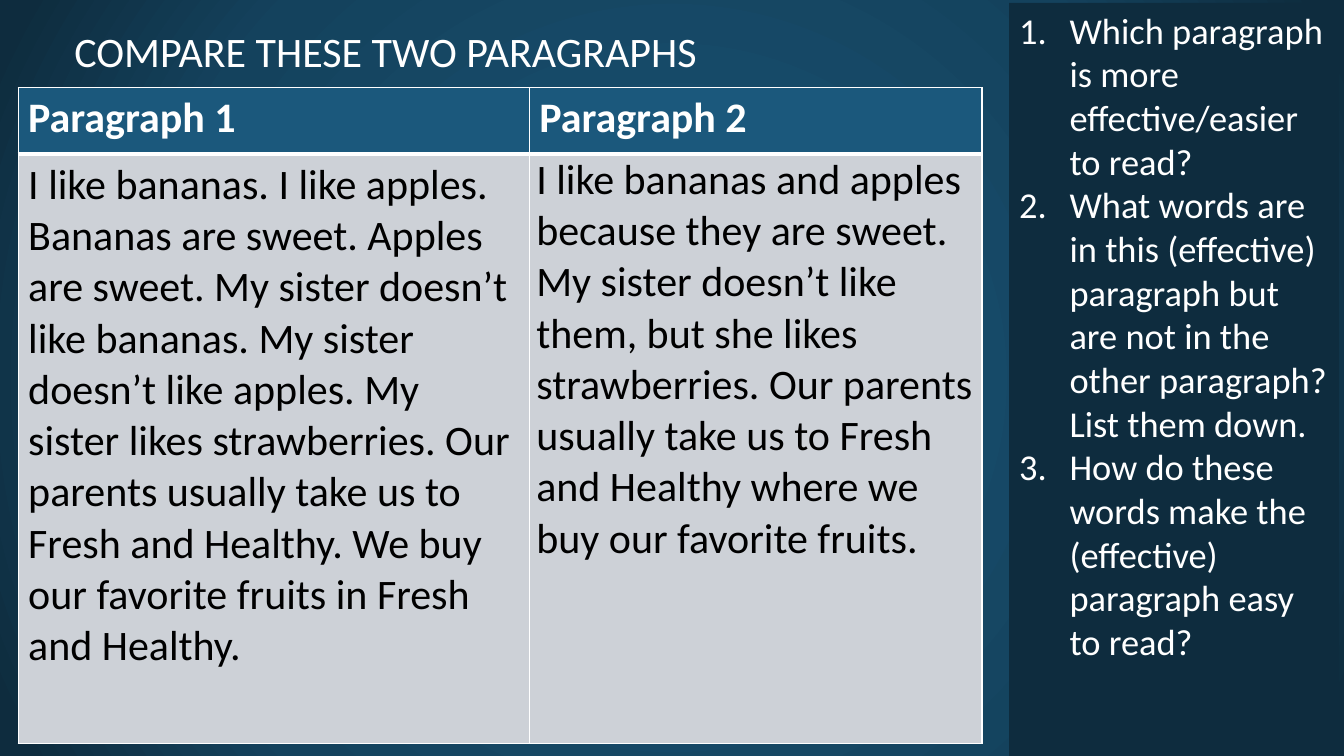
from lxml import etree
from pptx import Presentation
from pptx.dml.color import RGBColor
from pptx.enum import shapes, text
from pptx.oxml import ns
from pptx.util import Inches, Pt

TITLE = "COMPARE THESE TWO PARAGRAPHS"
HEADINGS = ["Paragraph 1", "Paragraph 2"]
PASSAGES = [
    "I like bananas. I like apples. Bananas are sweet. Apples are sweet. "
    "My sister doesn’t like bananas. My sister doesn’t like apples. "
    "My sister likes strawberries. Our parents usually take us to Fresh and Healthy. "
    "We buy our favorite fruits in Fresh and Healthy.",
    "I like bananas and apples because they are sweet. "
    "My sister doesn’t like them, but she likes strawberries. "
    "Our parents usually take us to Fresh and Healthy where we buy our favorite fruits.",
]
QUESTIONS = [
    "Which paragraph is more effective/easier to read?",
    "What words are in this (effective) paragraph but are not in the other paragraph? "
    "List them down.",
    "How do these words make the (effective) paragraph easy to read?",
]
COLOURS = {"white": "FFFFFF", "black": "000000", "header": "1B587C", "body": "CDD1D7",
           "glow": "184E6E", "mid": "14425D", "navy": "0E2C3E"}
GLOW_STOPS = [(0, "glow"), (23, "glow"), (69, "mid"), (97, "navy")]
COLUMNS = [5.07, 4.49]
ROWS = [0.66, 5.85]
TABLE_LEFT, TABLE_TOP = 0.18, 0.87
FONT = "Calibri"


def colour(name):
    return RGBColor.from_string(COLOURS[name])


def add(parent, tag, **attributes):
    return etree.SubElement(parent, ns.qn(tag), {k: str(v) for k, v in attributes.items()})


def add_colour(parent, name):
    add(parent, "a:srgbClr", val=COLOURS[name])


def style(para, size, name, bold=False):
    for span in para.runs:
        span.font.name, span.font.size, span.font.bold = FONT, Pt(size), bold
        span.font.color.rgb = colour(name)


def paint_background(page):
    page.background.fill.gradient()
    gradient = page._element.find(".//" + ns.qn("a:gradFill"))
    for child in list(gradient):
        gradient.remove(child)
    stops = add(gradient, "a:gsLst")
    for share, name in GLOW_STOPS:
        add_colour(add(stops, "a:gs", pos=share * 1000), name)
    circle = add(gradient, "a:path", path="circle")
    add(circle, "a:fillToRect", l=50000, t=50000, r=50000, b=50000)


def add_borders(cell, widths):
    properties = cell._tc.get_or_add_tcPr()
    for side, width in zip("LRTB", widths):
        line = add(properties, "a:ln" + side, w=Pt(width))
        add_colour(add(line, "a:solidFill"), "white")


def add_title(page):
    box = page.shapes.add_textbox(Inches(0.64), Inches(0.13), Inches(7.31), Inches(0.75))
    frame = box.text_frame
    frame.word_wrap = True
    frame.vertical_anchor = text.MSO_ANCHOR.MIDDLE
    frame.text = TITLE
    style(frame.paragraphs[0], 30, "white")


def add_comparison(page):
    table = page.shapes.add_table(
        len(ROWS), len(COLUMNS), Inches(TABLE_LEFT), Inches(TABLE_TOP),
        Inches(sum(COLUMNS)), Inches(sum(ROWS))).table
    for column, width in zip(table.columns, COLUMNS):
        column.width = Inches(width)
    for row, height in zip(table.rows, ROWS):
        row.height = Inches(height)
    looks = [(HEADINGS, "header", "white", True, (1, 1, 1, 3)),
             (PASSAGES, "body", "black", False, (1, 1, 3, 1))]
    for r, (words, fill, ink, bold, widths) in enumerate(looks):
        for c, wording in enumerate(words):
            cell = table.cell(r, c)
            add_borders(cell, widths)
            cell.fill.solid()
            cell.fill.fore_color.rgb = colour(fill)
            cell.text_frame.text = wording
            style(cell.text_frame.paragraphs[0], 30, ink, bold)
    second = table.cell(1, 1)
    second.margin_left = second.margin_right = Inches(0.07)
    second.margin_top = second.margin_bottom = 0


def add_questions(page):
    panel = page.shapes.add_shape(shapes.MSO_SHAPE.RECTANGLE, Inches(10.01), Inches(0.03),
                                  Inches(3.27), Inches(7.54))
    panel.shadow.inherit = False
    panel.fill.solid()
    panel.fill.fore_color.rgb = colour("navy")
    panel.line.fill.background()
    frame = panel.text_frame
    frame.word_wrap = True
    frame.vertical_anchor = text.MSO_ANCHOR.TOP
    frame.text = "\n".join(QUESTIONS)
    for para in frame.paragraphs:
        para.alignment = text.PP_ALIGN.LEFT
        properties = para._p.get_or_add_pPr()
        properties.set("marL", str(Inches(0.5)))
        properties.set("indent", str(Inches(-0.5)))
        add(properties, "a:buFont", typeface="+mj-lt")
        add(properties, "a:buAutoNum", type="arabicPeriod")
        style(para, 26, "white")


def main():
    deck = Presentation()
    deck.slide_width, deck.slide_height = Inches(13.33), Inches(7.5)
    page = deck.slides.add_slide(deck.slide_layouts[6])
    paint_background(page)
    add_title(page)
    add_comparison(page)
    add_questions(page)
    deck.save("out.pptx")


if __name__ == "__main__":
    main()
